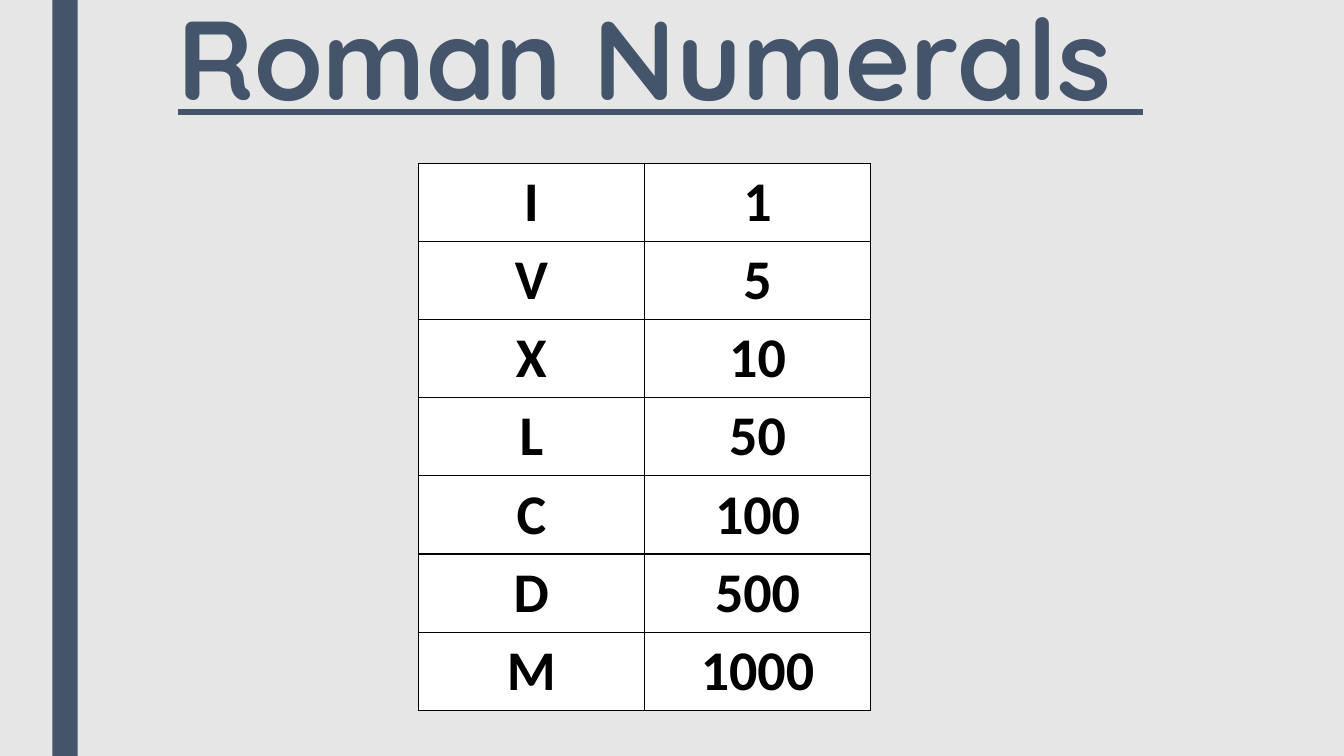
from dataclasses import dataclass

from lxml import etree
from pptx import Presentation
from pptx.dml.color import RGBColor
from pptx.enum.shapes import MSO_SHAPE
from pptx.enum.text import MSO_ANCHOR, PP_ALIGN
from pptx.oxml.ns import qn
from pptx.util import Cm, Pt

RECTANGLE = MSO_SHAPE.RECTANGLE
TOP, MIDDLE = MSO_ANCHOR.TOP, MSO_ANCHOR.MIDDLE
LEFT, CENTER = PP_ALIGN.LEFT, PP_ALIGN.CENTER
BLANK_LAYOUT = 6
SLIDE_WIDTH, SLIDE_HEIGHT = 33.87, 19.05
NUMERALS = {"I": 1, "V": 5, "X": 10, "L": 50, "C": 100, "D": 500, "M": 1000}


@dataclass(frozen=True)
class Theme:
    """Colours, fonts and type sizes of the slide."""

    background: str = "E7E6E6"
    accent: str = "44546A"
    cell: str = "FFFFFF"
    ink: str = "000000"
    title_font: str = "Quicksand"
    table_font: str = "Calibri"
    title_size: int = 80
    table_size: int = 40
    border_width: int = 1


class SlideBuilder:
    """Adds themed elements to the current slide."""

    def __init__(self, slide, theme):
        self.slide = slide
        self.theme = theme

    def paint(self, fill, color):
        """Give a fill one solid colour."""
        fill.solid()
        fill.fore_color.rgb = RGBColor.from_string(color)

    def add_text(self, frame, text, color, paragraph_format, font_format):
        """Put one formatted paragraph into a text frame."""
        paragraph = frame.paragraphs[0]
        run = paragraph.add_run()
        run.text = text
        run.font.color.rgb = RGBColor.from_string(color)
        for target, values in ((paragraph, paragraph_format), (run.font, font_format)):
            for name, value in values.items():
                setattr(target, name, value)

    def background(self):
        """Colour the slide background."""
        self.paint(self.slide.background.fill, self.theme.background)

    def bar(self, left, top, width, height):
        """Add a plain accent rectangle."""
        shape = self.slide.shapes.add_shape(
            RECTANGLE, Cm(left), Cm(top), Cm(width), Cm(height))
        shape.shadow.inherit = False
        shape.line.fill.background()
        self.paint(shape.fill, self.theme.accent)

    def title(self, text, left, top, width, height):
        """Add the underlined heading."""
        frame = self.slide.shapes.add_textbox(
            Cm(left), Cm(top), Cm(width), Cm(height)).text_frame
        frame.word_wrap = True
        frame.vertical_anchor = TOP
        self.add_text(frame, text, self.theme.accent,
                      {"alignment": LEFT, "line_spacing": 0.89},
                      {"name": self.theme.title_font, "size": Pt(self.theme.title_size),
                       "bold": True, "underline": True})

    def border(self, cell):
        """Draw a thin line on every side of a cell."""
        properties = cell._tc.get_or_add_tcPr()
        for position, side in enumerate(("a:lnL", "a:lnR", "a:lnT", "a:lnB")):
            line = etree.Element(qn(side), w=str(Pt(self.theme.border_width)))
            fill = etree.SubElement(line, qn("a:solidFill"))
            etree.SubElement(fill, qn("a:srgbClr"), val=self.theme.ink)
            properties.insert(position, line)

    def table(self, rows, left, top, width, height):
        """Add a bordered table with equal rows and columns."""
        table = self.slide.shapes.add_table(
            len(rows), len(rows[0]), Cm(left), Cm(top), Cm(width), Cm(height)).table
        table.first_row = table.horz_banding = False
        for row_index, values in enumerate(rows):
            for column_index, value in enumerate(values):
                cell = table.cell(row_index, column_index)
                cell.vertical_anchor = MIDDLE
                self.paint(cell.fill, self.theme.cell)
                self.border(cell)
                self.add_text(cell.text_frame, str(value), self.theme.ink,
                              {"alignment": CENTER},
                              {"name": self.theme.table_font,
                               "size": Pt(self.theme.table_size), "bold": True})


def main():
    """Build and save the presentation."""
    presentation = Presentation()
    presentation.slide_width = Cm(SLIDE_WIDTH)
    presentation.slide_height = Cm(SLIDE_HEIGHT)
    slide = presentation.slides.add_slide(presentation.slide_layouts[BLANK_LAYOUT])
    builder = SlideBuilder(slide, Theme())
    builder.background()
    builder.bar(1.32, 0, 0.64, SLIDE_HEIGHT)
    builder.title("Roman Numerals ", 4.23, 0, 25.4, 3.91)
    builder.table(list(NUMERALS.items()), 10.54, 4.11, 11.4, 13.79)
    presentation.save("out.pptx")


if __name__ == "__main__":
    main()
